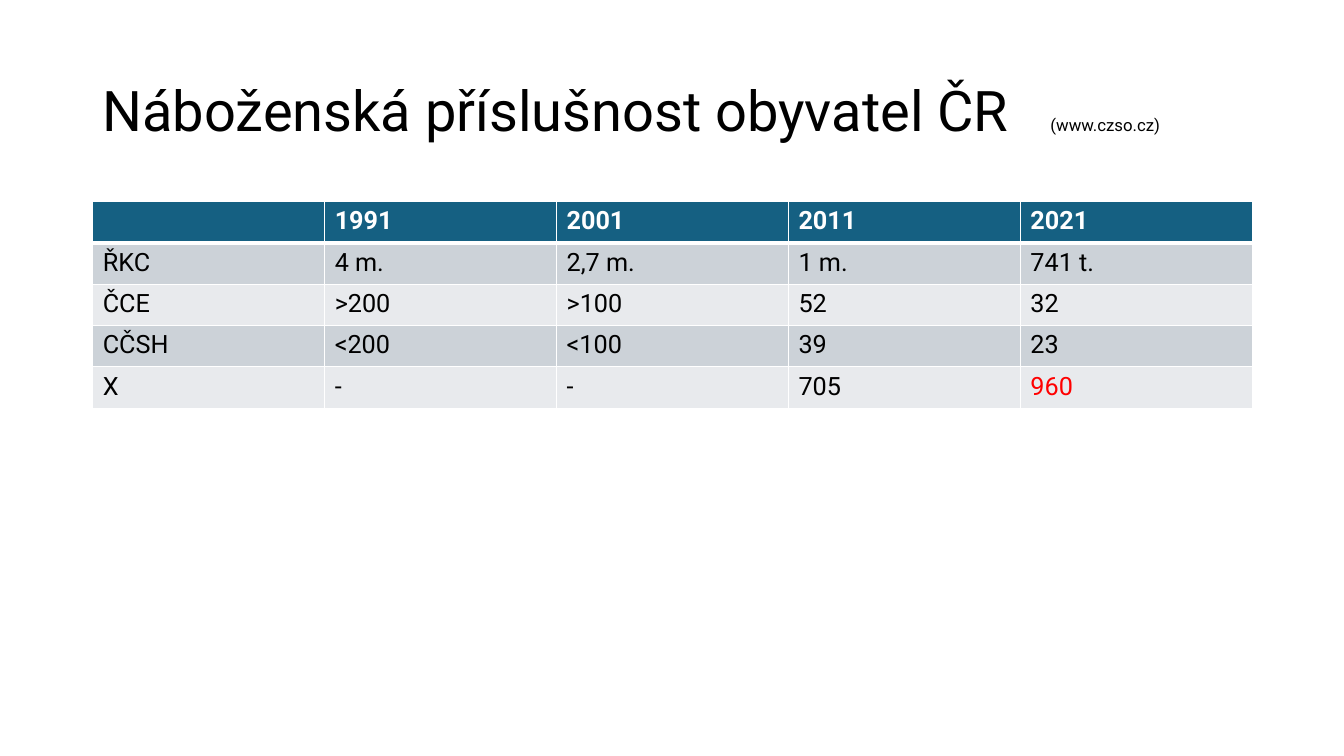
from dataclasses import dataclass

from lxml import etree
from pptx import Presentation
from pptx.dml.color import RGBColor
from pptx.enum.text import MSO_ANCHOR
from pptx.oxml.ns import qn
from pptx.util import Inches, Pt

MIDDLE = MSO_ANCHOR.MIDDLE


@dataclass(frozen=True)
class Theme:
    font: str = "Roboto"
    text: str = "000000"
    header_text: str = "FFFFFF"
    highlight: str = "FF0000"
    header_fill: str = "156082"
    bands: tuple = ("CCD2D8", "E8EAED")
    border: str = "FFFFFF"
    title_size: int = 40
    source_size: int = 12
    table_size: int = 18
    thin: int = 1
    thick: int = 3


THEME = Theme()

TITLE = "Náboženská příslušnost obyvatel ČR"
SOURCE = "(www.czso.cz)"
ROWS = [
    ["", "1991", "2001", "2011", "2021"],
    ["ŘKC", "4 m.", "2,7 m.", "1 m.", "741 t."],
    ["ČCE", ">200", ">100", "52", "32"],
    ["CČSH", "<200", "<100", "39", "23"],
    ["X", "-", "-", "705", "960"],
]
HIGHLIGHTED = (4, 4)

LEFT, WIDTH = 0.92, 11.5
ROW_HEIGHT = 0.41
SOURCE_TAB = 9.4


def style_font(font, color, size=None, bold=False):
    font.name = THEME.font
    font.color.rgb = RGBColor.from_string(color)
    font.bold = bold
    if size:
        font.size = Pt(size)


def add_tab_stop(p, position):
    tabs = etree.Element(qn("a:tabLst"))
    etree.SubElement(tabs, qn("a:tab"), pos=str(Inches(position)), algn="l")
    p.font._element.addprevious(tabs)


def add_title(slide):
    sp = slide.shapes.add_textbox(
        Inches(LEFT), Inches(0.4), Inches(WIDTH), Inches(1.45))
    tf = sp.text_frame
    tf.word_wrap = True
    tf.vertical_anchor = MIDDLE
    p = tf.paragraphs[0]
    p.line_spacing = 0.9
    style_font(p.font, THEME.text)
    add_tab_stop(p, SOURCE_TAB)
    for text, size in ((TITLE + "\t", THEME.title_size),
                       (SOURCE, THEME.source_size)):
        r = p.add_run()
        r.text = text
        r.font.size = Pt(size)


def set_borders(cell, top, bottom):
    # Borders come before the fill in the cell properties
    tc_pr = cell._tc.get_or_add_tcPr()
    widths = {"L": THEME.thin, "R": THEME.thin, "T": top, "B": bottom}
    for i, (side, width) in enumerate(widths.items()):
        ln = etree.Element(qn(f"a:ln{side}"), w=str(Pt(width)))
        fill = etree.SubElement(ln, qn("a:solidFill"))
        etree.SubElement(fill, qn("a:srgbClr"), val=THEME.border)
        tc_pr.insert(i, ln)


def fill_cell(cell, text, row, highlighted):
    header = row == 0
    fill = THEME.header_fill if header else THEME.bands[(row - 1) % 2]
    color = THEME.header_text if header else THEME.text
    if highlighted:
        color = THEME.highlight
    cell.fill.solid()
    cell.fill.fore_color.rgb = RGBColor.from_string(fill)
    set_borders(cell,
                top=THEME.thick if row == 1 else THEME.thin,
                bottom=THEME.thick if header else THEME.thin)
    p = cell.text_frame.paragraphs[0]
    p.text = text
    style_font(p.font, color, THEME.table_size, bold=header)


def add_data_table(slide):
    table = slide.shapes.add_table(
        len(ROWS), len(ROWS[0]), Inches(LEFT), Inches(2),
        Inches(WIDTH), Inches(ROW_HEIGHT * len(ROWS))).table
    for i, values in enumerate(ROWS):
        for j, text in enumerate(values):
            fill_cell(table.cell(i, j), text, i, (i, j) == HIGHLIGHTED)


def main():
    prs = Presentation()
    prs.slide_width, prs.slide_height = Inches(13.33), Inches(7.5)
    slide = prs.slides.add_slide(prs.slide_layouts[6])
    # Title with its data source
    add_title(slide)
    # Religious affiliation by census year
    add_data_table(slide)
    prs.save("out.pptx")


if __name__ == "__main__":
    main()
